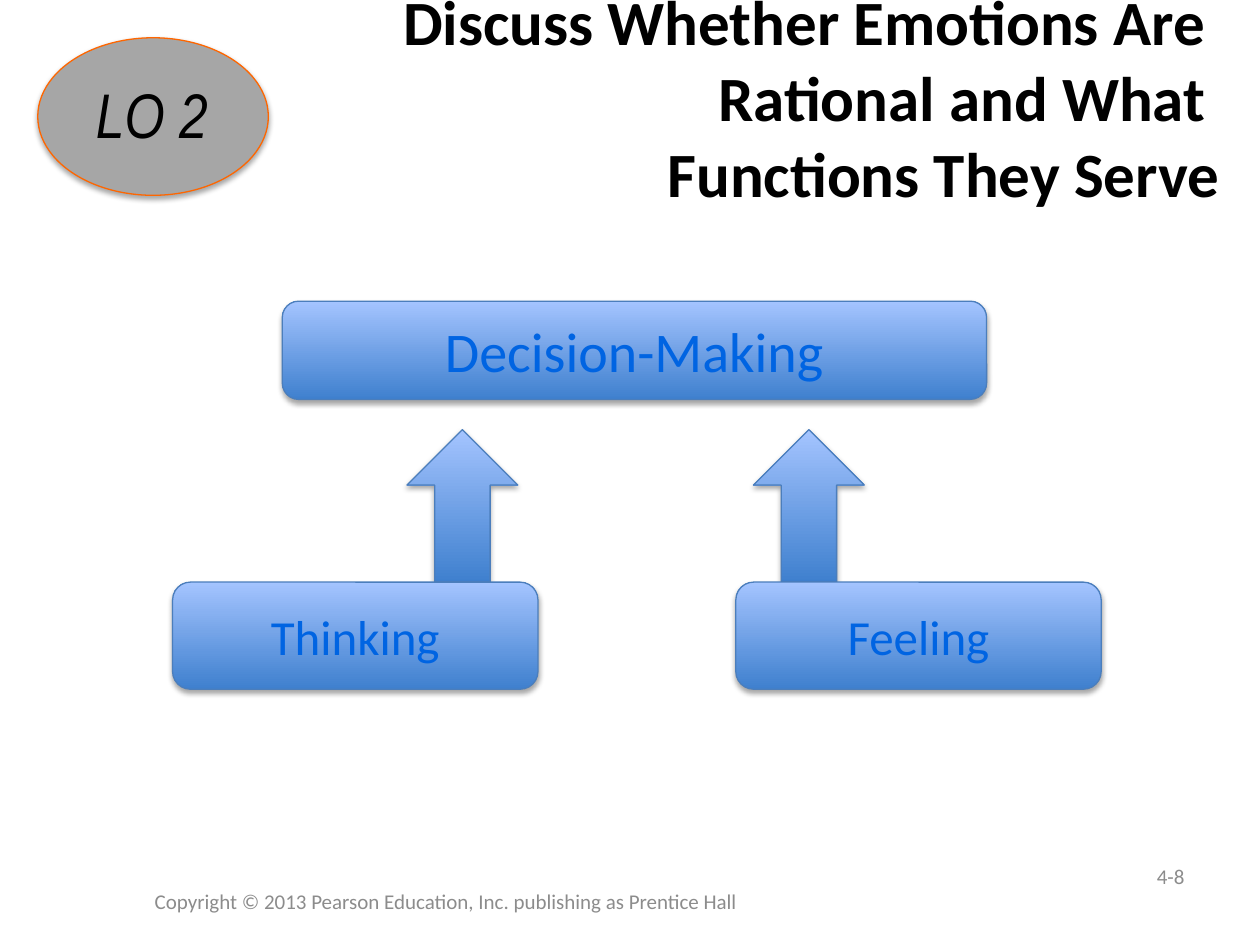
from lxml import etree
from pptx import Presentation
from pptx import util as u
from pptx.dml.color import RGBColor
from pptx.enum import shapes, text
from pptx.oxml.ns import qn

BLACK = RGBColor(0x00, 0x00, 0x00)
GRAY = RGBColor(0x8C, 0x8C, 0x8C)
OVAL_GRAY = RGBColor(0xA6, 0xA6, 0xA6)
ORANGE = RGBColor(0xFF, 0x66, 0x00)
DARK_BLUE = RGBColor(0x3F, 0x80, 0xCE)
LIGHT_BLUE = RGBColor(0xA4, 0xC4, 0xFF)
EDGE_BLUE = RGBColor(0x4B, 0x7E, 0xBC)
TEXT_BLUE = RGBColor(0x00, 0x64, 0xE2)

COLUMNS, ROWS = 100, 75
SHAPE = shapes.MSO_SHAPE
ALIGN = text.PP_ALIGN
ANCHOR = text.MSO_ANCHOR


class SlideBuilder:
    """Places styled elements on a grid of COLUMNS by ROWS."""

    def __init__(self, presentation):
        self.slide = presentation.slides.add_slide(presentation.slide_layouts[6])
        self.column = presentation.slide_width / COLUMNS
        self.row = presentation.slide_height / ROWS

    def place(self, left, top, width, height):
        return (round(left * self.column), round(top * self.row),
                round(width * self.column), round(height * self.row))

    def add_shadow(self, effects):
        shadow = etree.SubElement(
            effects, qn("a:outerShdw"), blurRad=str(u.Pt(3.1)), dist=str(u.Pt(1.8)),
            dir="5400000", rotWithShape="0")
        color = etree.SubElement(shadow, qn("a:srgbClr"), val=str(BLACK))
        etree.SubElement(color, qn("a:alpha"), val="35000")

    def fill_text(self, shape, lines, align=ALIGN.CENTER, anchor=ANCHOR.MIDDLE, **font):
        frame = shape.text_frame
        frame.word_wrap = True
        frame.vertical_anchor = anchor
        paragraph = frame.paragraphs[0]
        paragraph.alignment = align
        color = font.pop("color")
        for index, line in enumerate(lines):
            if index:
                paragraph.add_line_break()
            run = paragraph.add_run()
            run.text = line
            run.font.color.rgb = color
            for name, value in {"name": "Calibri", **font}.items():
                setattr(run.font, name, value)
        return paragraph

    def label(self, position, *lines, **style):
        box = self.slide.shapes.add_textbox(*self.place(*position))
        return self.fill_text(box, lines, **style)

    def shape(self, kind, position, edge):
        shape = self.slide.shapes.add_shape(kind, *self.place(*position))
        shape.line.color.rgb = edge
        shape.line.width = u.Pt(0.75)
        shape.shadow.inherit = False
        self.add_shadow(shape.element.spPr.find(qn("a:effectLst")))
        return shape

    def oval(self, position):
        oval = self.shape(SHAPE.OVAL, position, ORANGE)
        oval.fill.solid()
        oval.fill.fore_color.rgb = OVAL_GRAY

    def blue_shape(self, kind, position):
        shape = self.shape(kind, position, EDGE_BLUE)
        shape.fill.gradient()
        shape.fill.gradient_angle = 90
        for stop, color in zip(shape.fill.gradient_stops, (DARK_BLUE, LIGHT_BLUE)):
            stop.color.rgb = color
        return shape

    def blue_box(self, position, caption, size):
        box = self.blue_shape(SHAPE.ROUNDED_RECTANGLE, position)
        self.fill_text(box, [caption], size=u.Pt(size), color=TEXT_BLUE)

    def shadowed_label(self, position, caption, **style):
        paragraph = self.label(position, caption, **style)
        fill = paragraph.runs[0].font._element.find(qn("a:solidFill"))
        effects = etree.Element(qn("a:effectLst"))
        fill.addnext(effects)
        self.add_shadow(effects)


def main():
    presentation = Presentation()
    presentation.slide_width = u.Inches(10)
    presentation.slide_height = u.Inches(7.5)
    builder = SlideBuilder(presentation)

    for left in (59.8, 32.3):
        builder.blue_shape(SHAPE.UP_ARROW, (left, 34.1, 8.8, 12.1))

    small = {"size": u.Pt(12), "color": GRAY}
    builder.label((5, 69.5, 60.8, 4),
                  "Copyright © 2013 Pearson Education, Inc. publishing as Prentice Hall", **small)
    builder.label((88.3, 67.5, 6.7, 4), "4-8", align=ALIGN.RIGHT, **small)

    builder.oval((3, 3, 18.3, 12.5))
    builder.shadowed_label((5.8, 5.5, 12.5, 7.1), "LO 2", anchor=ANCHOR.TOP,
                           name="Arial Narrow", size=u.Pt(36), italic=True, color=BLACK)
    builder.label((7.8, -0.2, 90, 15.7), "Discuss Whether Emotions Are ",
                  "Rational and What ", "Functions They Serve",
                  align=ALIGN.RIGHT, size=u.Pt(36), bold=True, color=BLACK)

    builder.blue_box((22.4, 23.9, 55.9, 7.8), "Decision-Making", 32)
    for left, caption in ((13.7, "Thinking"), (58.4, "Feeling")):
        builder.blue_box((left, 46.2, 29, 8.5), caption, 28)

    presentation.save("out.pptx")


if __name__ == "__main__":
    main()
